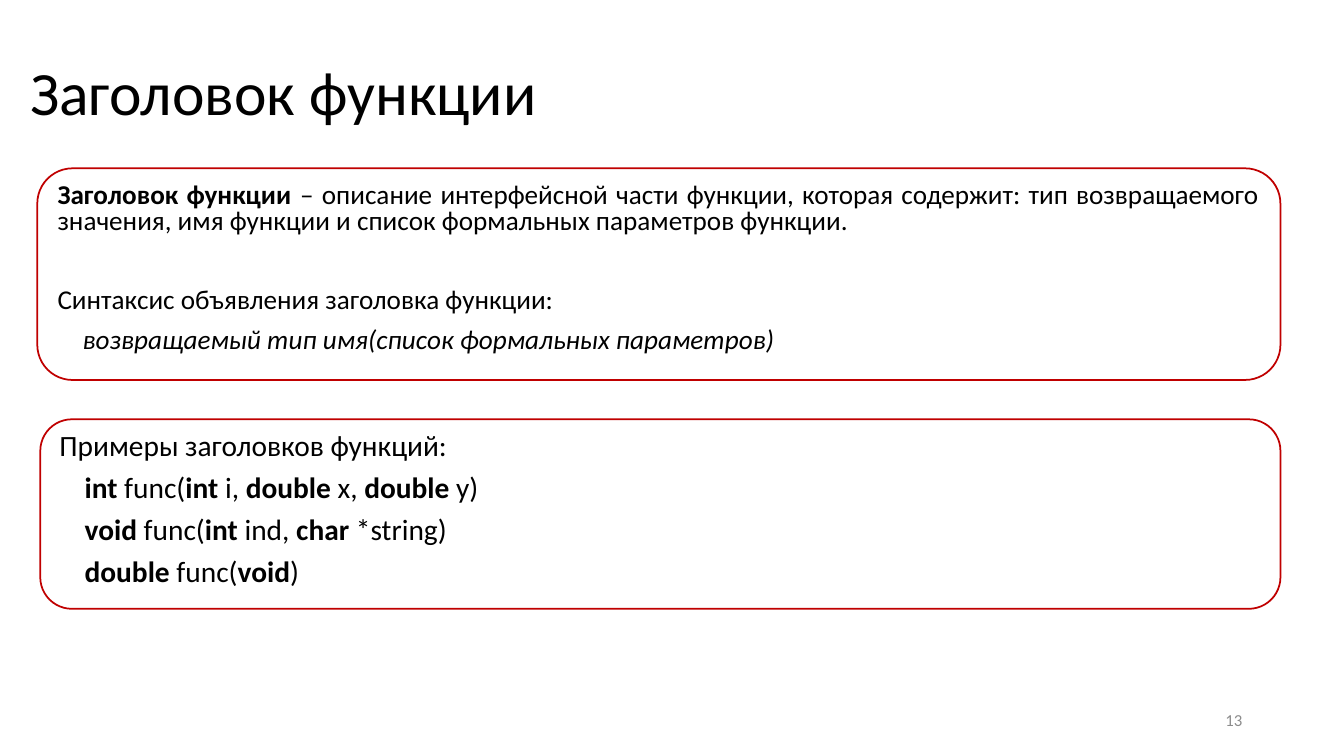
"""Builds the slide about function headers."""
from dataclasses import dataclass

from pptx import Presentation
from pptx.dml.color import RGBColor
from pptx.enum.shapes import MSO_SHAPE as Shape
from pptx.enum.text import MSO_ANCHOR as Anchor, PP_ALIGN as Align
from pptx.util import Emu, Pt

PX = 9144
FONT = "Calibri"
COLORS = {"text": "000000", "border": "C00000", "number": "8C8C8C"}


@dataclass
class Run:
    text: str
    bold: bool = False
    italic: bool = False


@dataclass
class Line:
    runs: list[Run]
    indent: int = 0
    space_before: int = 10


@dataclass
class Card:
    box: tuple[int, int, int, int]
    size: float
    align: Align
    lines: list[Line]


def px(value: int) -> Emu:
    return Emu(value * PX)


def color(name: str) -> RGBColor:
    return RGBColor.from_string(COLORS[name])


def format_run(run, size: float, color_name: str) -> None:
    run.font.name = FONT
    run.font.size = Pt(size)
    run.font.color.rgb = color(color_name)


def place(shape, box: tuple[int, int, int, int]) -> None:
    shape.left, shape.top, shape.width, shape.height = map(px, box)


def fill_label(shape, text: str, size: float, color_name: str, align: Align) -> None:
    frame = shape.text_frame
    frame.text = text
    frame.word_wrap = True
    frame.vertical_anchor = Anchor.MIDDLE
    paragraph = frame.paragraphs[0]
    paragraph.alignment = align
    paragraph.line_spacing = 0.9
    format_run(paragraph.runs[0], size, color_name)


def code_line(*parts: str) -> Line:
    """Alternates bold keywords with plain text."""
    return Line([Run(part, bold=i % 2 == 0) for i, part in enumerate(parts)], indent=25)


def draw_card(slide, card: Card) -> None:
    shape = slide.shapes.add_shape(Shape.ROUNDED_RECTANGLE, *map(px, card.box))
    shape.shadow.inherit = False
    shape.fill.background()
    shape.line.color.rgb = color("border")
    shape.line.width = Pt(1.25)
    frame = shape.text_frame
    frame.word_wrap = True
    frame.vertical_anchor = Anchor.TOP
    for index, line in enumerate(card.lines):
        paragraph = frame.add_paragraph() if index else frame.paragraphs[0]
        paragraph.alignment = card.align
        paragraph.line_spacing = 0.8
        paragraph.space_before = Pt(line.space_before)
        paragraph._p.get_or_add_pPr().set("marL", str(px(line.indent)))
        for part in line.runs:
            run = paragraph.add_run()
            run.text = part.text
            run.font.bold = part.bold
            run.font.italic = part.italic
            format_run(run, card.size, "text")


CARDS = [
    Card((37, 167, 1233, 210), 19.4, Align.JUSTIFY, [
        Line([
            Run("Заголовок функции", bold=True),
            Run(" – описание интерфейсной части функции, которая содержит: тип "
                "возвращаемого значения, имя функции и список формальных "
                "параметров функции."),
        ]),
        Line([Run("Синтаксис объявления заголовка функции:")], space_before=38),
        Line([Run("возвращаемый тип имя(список формальных параметров)", italic=True)],
             indent=25),
    ]),
    Card((40, 416, 1230, 188), 21, Align.LEFT, [
        Line([Run("Примеры заголовков функций:")]),
        code_line("int", " func(", "int ", "i, ", "double ", "x, ", "double ", "y)"),
        code_line("void", " func(", "int ", "ind, ", "char", " *string)"),
        code_line("double", " func(", "void", ")"),
    ]),
]


def main() -> None:
    presentation = Presentation()
    presentation.slide_width, presentation.slide_height = px(1333), px(750)
    slide = presentation.slides.add_slide(presentation.slide_layouts[5])
    title = slide.shapes.title
    place(title, (20, 22, 1150, 145))
    fill_label(title, "Заголовок функции", 44, "text", Align.LEFT)
    for card in CARDS:
        draw_card(slide, card)
    number = slide.shapes.add_textbox(*map(px, (942, 695, 300, 40)))
    fill_label(number, "13", 12, "number", Align.RIGHT)
    presentation.save("out.pptx")


if __name__ == "__main__":
    main()
